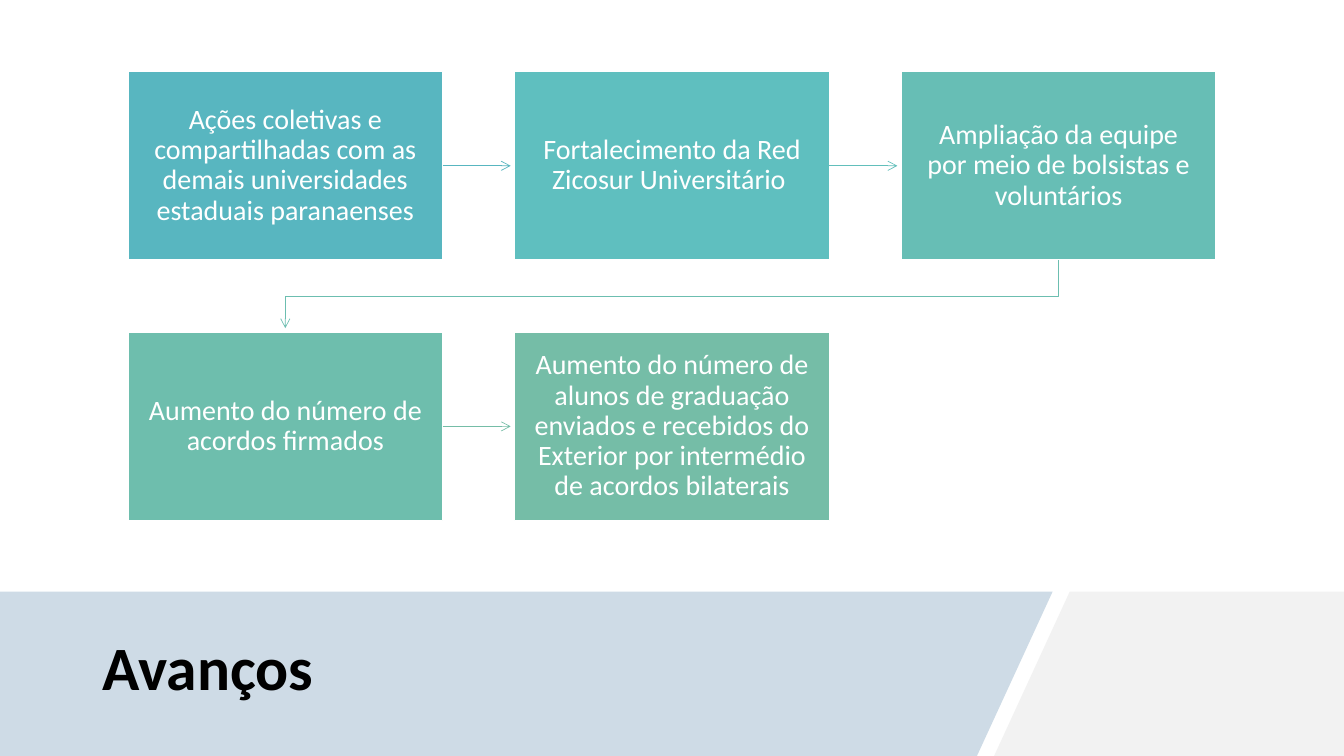
from dataclasses import dataclass

from lxml import etree
from pptx import Presentation
from pptx.dml.color import RGBColor
from pptx.enum.shapes import MSO_CONNECTOR, MSO_SHAPE
from pptx.enum.text import MSO_ANCHOR, PP_ALIGN
from pptx.oxml.ns import qn
from pptx.util import Inches, Pt

RECTANGLE = MSO_SHAPE.RECTANGLE
STRAIGHT = MSO_CONNECTOR.STRAIGHT
MIDDLE = MSO_ANCHOR.MIDDLE
LEFT, CENTER = PP_ALIGN.LEFT, PP_ALIGN.CENTER
RIGHT_SIDE = 3


@dataclass(frozen=True)
class Theme:
    font: str = "Calibri"
    title_size: int = 44
    step_size: int = 20
    title_color: str = "000000"
    white: str = "FFFFFF"
    band: str = "CEDBE6"
    corner: str = "F2F2F2"
    border_width: float = 1
    arrow_width: float = 0.5


THEME = Theme()
COLUMNS = 3
STEP_WIDTH, STEP_HEIGHT = 3.12, 1.87
COLUMN_PITCH, ROW_PITCH = 3.835, 2.585
ARROW_GAP = 0.04

STEPS = [
    ("Ações coletivas e compartilhadas com as demais universidades estaduais paranaenses", "58B6C0"),
    ("Fortalecimento da Red Zicosur Universitário ", "5FBFBF"),
    ("Ampliação da equipe por meio de bolsistas e voluntários", "67BEB5"),
    ("Aumento do número de acordos firmados", "6EBEAD"),
    ("Aumento do número de alunos de graduação enviados e recebidos do Exterior "
     "por intermédio de acordos bilaterais", "75BDA7"),
]
ARROW_COLORS = ["58B6C0", "62BFBB", "6CBEB0", "75BDA7"]


def color(value):
    return RGBColor.from_string(value)


def write_text(shape, text, size, text_color, alignment, bold=False):
    text_frame = shape.text_frame
    text_frame.text = text
    text_frame.word_wrap = True
    text_frame.vertical_anchor = MIDDLE
    paragraph = text_frame.paragraphs[0]
    paragraph.alignment = alignment
    paragraph.line_spacing = 0.9
    font = paragraph.runs[0].font
    font.name = THEME.font
    font.size = Pt(size)
    font.bold = bold
    font.color.rgb = color(text_color)


def add_outline(slide, points, close):
    corners = [(Inches(x), Inches(y)) for x, y in points]
    builder = slide.shapes.build_freeform(*corners[0])
    builder.add_line_segments(corners[1:], close=close)
    shape = builder.convert_to_shape()
    shape.shadow.inherit = False
    return shape


def add_panel(slide, points, fill_color):
    panel = add_outline(slide, points, True)
    panel.fill.solid()
    panel.fill.fore_color.rgb = color(fill_color)
    panel.line.fill.background()


def style_arrow(line, line_color):
    line.color.rgb = color(line_color)
    line.width = Pt(THEME.arrow_width)
    etree.SubElement(line._get_or_add_ln(), qn("a:tailEnd"), type="arrow")


def add_step(slide, left, top, text, fill_color):
    step = slide.shapes.add_shape(
        RECTANGLE, Inches(left), Inches(top), Inches(STEP_WIDTH), Inches(STEP_HEIGHT))
    step.shadow.inherit = False
    step.fill.solid()
    step.fill.fore_color.rgb = color(fill_color)
    step.line.color.rgb = color(THEME.white)
    step.line.width = Pt(THEME.border_width)
    text_frame = step.text_frame
    text_frame.margin_left = text_frame.margin_right = Inches(0.15)
    text_frame.margin_top = text_frame.margin_bottom = Inches(0.16)
    write_text(step, text, THEME.step_size, THEME.white, CENTER)
    return step


def add_row_arrow(slide, step, end_left, line_color):
    middle = step.top + step.height // 2
    arrow = slide.shapes.add_connector(
        STRAIGHT, step.left + step.width, middle, Inches(end_left), middle)
    arrow.begin_connect(step, RIGHT_SIDE)
    style_arrow(arrow.line, line_color)
    etree.SubElement(arrow._element.spPr, qn("a:effectLst"))


def add_return_arrow(slide, start, end, line_color):
    start_left, start_top = start
    end_left, end_top = end
    turn = start_top + (ROW_PITCH - STEP_HEIGHT) / 2
    points = [start, (start_left, turn), (end_left, turn), (end_left, end_top)]
    arrow = add_outline(slide, points, False)
    arrow.fill.background()
    style_arrow(arrow.line, line_color)


def add_flow(slide, left, top):
    places = [(left + index % COLUMNS * COLUMN_PITCH, top + index // COLUMNS * ROW_PITCH)
              for index in range(len(STEPS))]
    steps = [add_step(slide, *place, *content) for place, content in zip(places, STEPS)]
    for index, line_color in enumerate(ARROW_COLORS):
        step_left, step_top = places[index]
        next_left, next_top = places[index + 1]
        if next_top == step_top:
            add_row_arrow(slide, steps[index], next_left - ARROW_GAP, line_color)
        else:
            start = (step_left + STEP_WIDTH / 2, step_top + STEP_HEIGHT)
            end = (next_left + STEP_WIDTH / 2, next_top - ARROW_GAP)
            add_return_arrow(slide, start, end, line_color)


def add_title_band(slide, top, width, height):
    bottom = top + height
    add_panel(slide, [(10.61, top), (width, top), (width, bottom), (9.86, bottom)], THEME.corner)
    add_panel(slide, [(0, top), (10.44, top), (9.69, bottom), (0, bottom)], THEME.band)
    title = slide.shapes.add_textbox(
        Inches(0.92), Inches(top + 0.18), Inches(8.83), Inches(1.2))
    write_text(title, "Avanços", THEME.title_size, THEME.title_color, LEFT, bold=True)


def main():
    presentation = Presentation()
    presentation.slide_width = Inches(13.33)
    presentation.slide_height = Inches(7.5)
    slide = presentation.slides.add_slide(presentation.slide_layouts[6])
    add_title_band(slide, 5.87, 13.33, 1.63)
    add_flow(slide, 1.27, 0.71)
    presentation.save("out.pptx")


if __name__ == "__main__":
    main()
